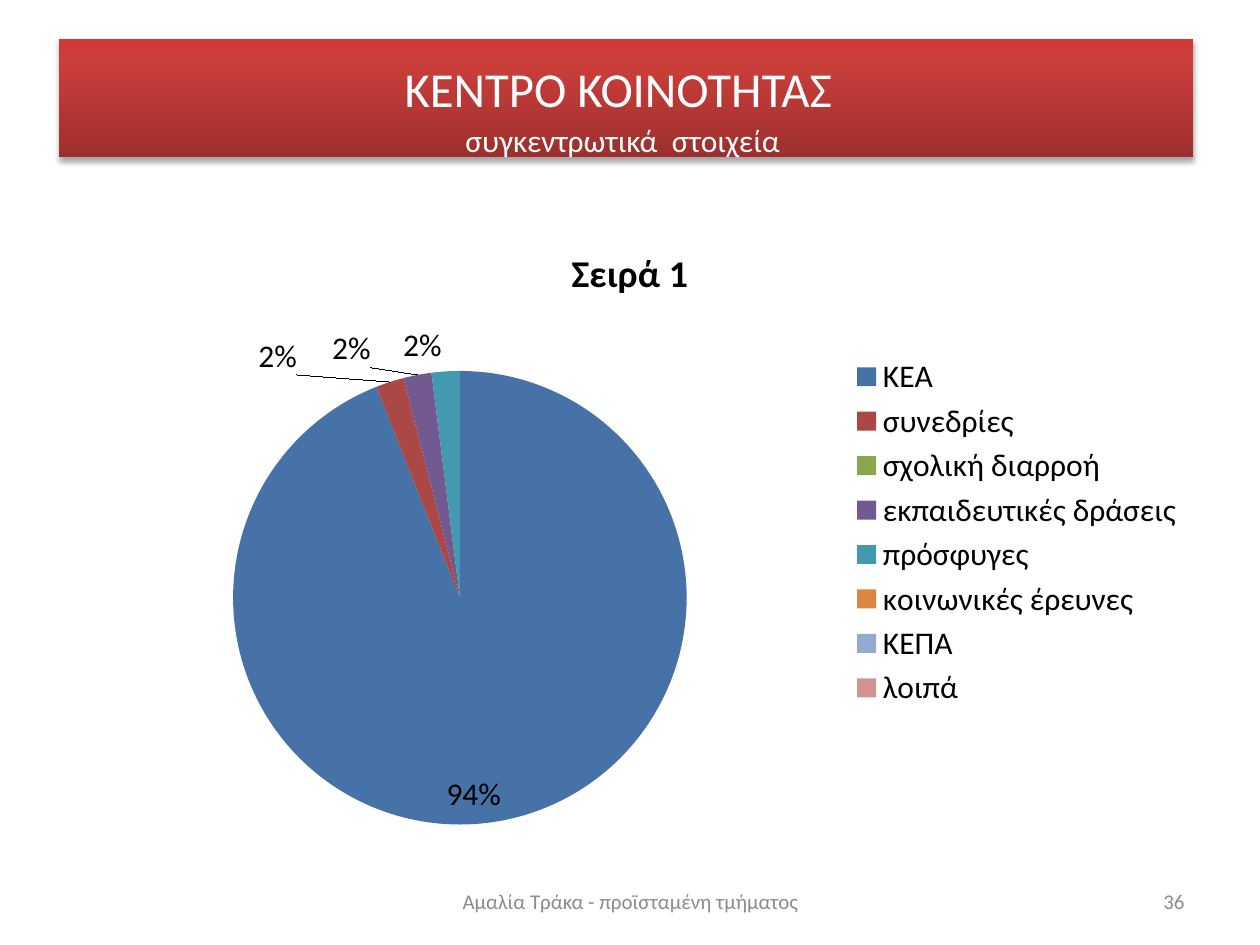
from lxml.etree import SubElement
from pptx import Presentation
from pptx.chart.data import CategoryChartData
from pptx.dml.color import RGBColor
from pptx.enum.chart import XL_CHART_TYPE, XL_LABEL_POSITION, XL_LEGEND_POSITION
from pptx.enum.text import MSO_ANCHOR, PP_ALIGN
from pptx.oxml import parse_xml
from pptx.oxml.ns import nsdecls, qn
from pptx.util import Inches, Pt

FONT = "Calibri"
COLORS = {"white": "FFFFFF", "black": "000000", "footer": "8C8C8C",
          "dark": "9C2F2D", "mid": "CB3E3A", "light": "CE3B37"}
SLICES = [("ΚΕΑ", 94, "4672A8"), ("συνεδρίες", 2, "AB4744"),
          ("σχολική διαρροή", 0, "8AA64F"), ("εκπαιδευτικές δράσεις", 2, "725990"),
          ("πρόσφυγες", 2, "4299B0"), ("κοινωνικές έρευνες", 0, "DC853E"),
          ("ΚΕΠΑ", 0, "93A9CF"), ("λοιπά", 0, "D19392")]
LABEL_SHIFTS = {1: -0.08, 2: -0.06, 3: -0.04, 4: -0.02, 5: 0, 6: 0.04, 7: 0.08}


def style_font(font, size, color, bold=False):
    """Set the face, size, colour and weight of a font."""
    font.name, font.size, font.bold = FONT, Pt(size), bold
    font.color.rgb = RGBColor.from_string(COLORS[color])


def set_layout(parent, index, **parts):
    """Put a manual layout into a chart element at the given child index."""
    for old in parent.findall(qn("c:layout")):
        parent.remove(old)
    layout = parent.makeelement(qn("c:layout"), {})
    parent.insert(index, layout)
    manual = SubElement(layout, qn("c:manualLayout"))
    for tag, value in parts.items():
        SubElement(manual, qn(f"c:{tag}"), val=str(value))


def add_banner(s, box):
    """Place the title on a red gradient band with a soft shadow."""
    title = s.shapes.title
    title.left, title.top, title.width, title.height = map(Inches, box)
    stops = "".join(f'<a:gs pos="{pos}"><a:srgbClr val="{COLORS[key]}"/></a:gs>'
                    for pos, key in ((0, "dark"), (80000, "mid"), (100000, "light")))
    sp_pr = title._element.spPr
    sp_pr.append(parse_xml('<a:prstGeom %s prst="rect"><a:avLst/></a:prstGeom>' % nsdecls("a")))
    sp_pr.append(parse_xml(f'<a:gradFill {nsdecls("a")}><a:gsLst>{stops}</a:gsLst>'
                           '<a:lin ang="16200000" scaled="0"/></a:gradFill>'))
    sp_pr.append(parse_xml(
        f'<a:effectLst {nsdecls("a")}><a:outerShdw blurRad="39370" dist="22860" dir="5400000" '
        f'rotWithShape="0"><a:srgbClr val="{COLORS["black"]}"><a:alpha val="35000"/>'
        '</a:srgbClr></a:outerShdw></a:effectLst>'))
    tf = title.text_frame
    tf.vertical_anchor = MSO_ANCHOR.MIDDLE
    p = tf.paragraphs[0]
    p.alignment = PP_ALIGN.CENTER
    for text, size in (("ΚΕΝΤΡΟ ΚΟΙΝΟΤΗΤΑΣ", 27.9), (" ", 39.6),
                       ("συγκεντρωτικά  στοιχεία ", 18)):
        r = p.add_run()
        r.text = text
        style_font(r.font, size, "white")
        if text == " ":
            p.add_line_break()


def add_pie(s, box):
    """Place the pie chart with its title, legend and percent labels."""
    data = CategoryChartData()
    data.categories = [name for name, _, _ in SLICES]
    data.add_series("Σειρά 1", [value for _, value, _ in SLICES])
    chart = s.shapes.add_chart(XL_CHART_TYPE.PIE, *map(Inches, box), data).chart
    style_font(chart.font, 18, "black")
    chart.has_title = True
    p = chart.chart_title.text_frame.paragraphs[0]
    p.text = "Σειρά 1"
    style_font(p.font, 21.6, "black", True)
    chart.has_legend = True
    chart.legend.position = XL_LEGEND_POSITION.RIGHT
    chart.legend.include_in_layout = False
    style_font(chart.legend.font, 18, "black")
    plot = chart.plots[0]
    plot.vary_by_categories = True
    plot_area = chart._chartSpace.find(".//" + qn("c:plotArea"))
    set_layout(plot_area, 0, layoutTarget="inner", xMode="edge", yMode="edge",
               x=0.15, y=0.24, w=0.4, h=0.73)
    series = plot.series[0]
    for i, (_, _, color) in enumerate(SLICES):
        fill = series.points[i].format.fill
        fill.solid()
        fill.fore_color.rgb = RGBColor.from_string(color)
    labels = series.data_labels
    labels.show_percentage, labels.show_value = True, False
    labels.number_format, labels.number_format_is_linked = "0%", False
    labels.position = XL_LABEL_POSITION.OUTSIDE_END
    style_font(labels.font, 18, "black")
    series.points[0].data_label.position = XL_LABEL_POSITION.INSIDE_END
    for i, shift in LABEL_SHIFTS.items():
        series.points[i].data_label.position = XL_LABEL_POSITION.OUTSIDE_END
    for label in labels._element.findall(qn("c:dLbl")):
        label.find(qn("c:showVal")).set("val", "0")
        label.find(qn("c:showPercent")).set("val", "1")
        i = int(label.find(qn("c:idx")).get("val"))
        if i in LABEL_SHIFTS:
            set_layout(label, 1, x=LABEL_SHIFTS[i], y=0)


def add_footer(s, box, text, align):
    """Place one grey line of footer text."""
    tf = s.shapes.add_textbox(*map(Inches, box)).text_frame
    tf.word_wrap = True
    tf.vertical_anchor = MSO_ANCHOR.MIDDLE
    p = tf.paragraphs[0]
    p.text, p.alignment = text, align
    style_font(p.font, 12, "footer")


def main():
    """Build the slide and save it."""
    prs = Presentation()
    prs.slide_width, prs.slide_height = Inches(10), Inches(7.5)
    s = prs.slides.add_slide(prs.slide_layouts[5])
    add_banner(s, (0.47, 0.31, 9, 0.94))
    add_pie(s, (0.5, 1.75, 9, 4.95))
    add_footer(s, (3.42, 6.95, 3.17, 0.4), "Αμαλία Τράκα - προϊσταμένη τμήματος", PP_ALIGN.CENTER)
    add_footer(s, (7.17, 6.95, 2.33, 0.4), "36", PP_ALIGN.RIGHT)
    prs.save("out.pptx")


if __name__ == "__main__":
    main()
